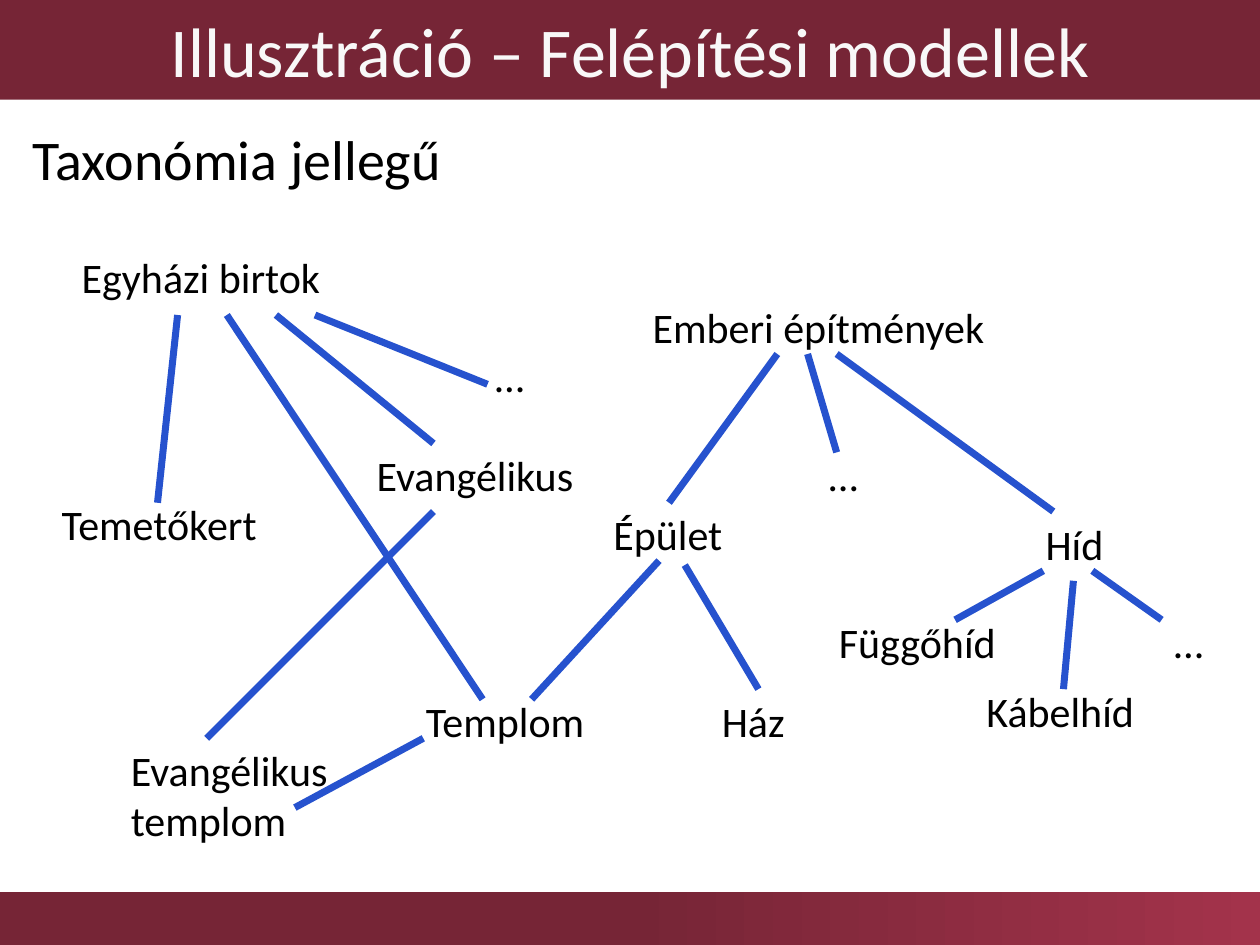
from pptx import Presentation
from pptx.dml.color import RGBColor as RGB
from pptx.enum.shapes import MSO_CONNECTOR as CONN, MSO_SHAPE as SHAPE
from pptx.enum.text import MSO_ANCHOR as ANCHOR, MSO_AUTO_SIZE as AUTO, PP_ALIGN as ALIGN
from pptx.oxml.ns import qn
from pptx.util import Pt
from lxml.etree import SubElement

INK = {"bar": "762536", "glow": "A3334B", "title": "F8F8F8",
       "text": "000000", "line": "2652CE"}
FONT = "Calibri"
ROW = 36  # height of a one-line label

# key: (text, left, top, width, height)
NODES = {
    "estate": ("Egyházi birtok", 39.6, 140.4, 157.7, ROW),
    "built": ("Emberi építmények", 365.8, 168.5, 270, ROW),
    "house": ("Épület", 343.4, 286.9, 95.8, ROW),
    "bridge": ("Híd", 590.4, 292.5, 95.8, ROW),
    "home": ("Ház", 405.4, 393.8, 95.8, ROW),
    "church": ("Templom", 236.2, 393.8, 106.6, ROW),
    "yard": ("Temetőkert", 28.1, 281.3, 140.4, ROW),
    "hung": ("Függőhíd", 472.3, 348.5, 146.2, ROW),
    "cable": ("Kábelhíd", 556.6, 388.1, 146.2, ROW),
    "more bridges": ("…", 663.8, 348.5, 39.6, ROW),
    "more built": ("…", 466.6, 253.4, 33.8, ROW),
    "faith": ("Evangélikus", 208.1, 253.4, 140.4, ROW),
    "more estate": ("…", 275.8, 196.6, 33.8, ROW),
    "both": ("Evangélikus templom", 67.7, 421.9, 140.4, 65.5),
}

# child end x, y, then parent end x, y
LINKS = [
    # from the church estate
    (90, 287.3, 101.5, 180), (275.8, 399.6, 129.6, 180),
    (247.7, 253.4, 157.7, 180), (278.6, 219.6, 180, 180),
    # from human structures
    (382.3, 287.3, 444.2, 202.3), (478.1, 258.5, 461.5, 202.3),
    (601.9, 292.3, 478.1, 202.3),
    # from building
    (303.8, 399.6, 376.6, 320.4),
    # from bridge
    (545.8, 354.2, 596.2, 326.2), (607.7, 393.8, 613.4, 331.9),
    (663.8, 354.2, 624.2, 326.2),
    # to the Lutheran church
    (118.1, 421.9, 247.7, 292.3), (168.5, 461.5, 241.9, 421.9),
]


def tint(key):
    return RGB.from_string(INK[key])


def place(shape, x, y, w, h):
    shape.left, shape.top, shape.width, shape.height = map(Pt, (x, y, w, h))


def write(shape, text, size=24, color="text", align=ALIGN.LEFT,
          anchor=ANCHOR.TOP, fit=AUTO.NONE, hang=None):
    frame = shape.text_frame
    frame.word_wrap = True
    frame.auto_size = fit
    frame.vertical_anchor = anchor
    para = frame.paragraphs[0]
    para.text = text
    if hang is not None:  # hanging indent without a bullet
        props = para._p.get_or_add_pPr()
        props.set("marL", str(Pt(hang)))
        props.set("indent", str(-Pt(hang)))
        SubElement(props, qn("a:buNone"))
    para.alignment = align
    para.space_before = Pt(0)
    font = para.runs[0].font
    font.name, font.size = FONT, Pt(size)
    font.color.rgb = tint(color)


def strip(slide):
    bar = slide.shapes.add_shape(SHAPE.RECTANGLE, Pt(0), Pt(509.8), Pt(720), Pt(30.2))
    bar.shadow.inherit = False
    bar.line.fill.background()
    bar.fill.gradient()
    bar.fill.gradient_angle = 0
    stops = bar.fill.gradient_stops
    for stop, pos, key in zip(stops, (0.5, 1), ("bar", "glow")):
        stop.position = pos
        stop.color.rgb = tint(key)


def label(slide, text, *box):
    shape = slide.shapes.add_textbox(*map(Pt, box))
    write(shape, text, fit=AUTO.SHAPE_TO_FIT_TEXT)
    return shape


def link(slide, *ends):
    line = slide.shapes.add_connector(CONN.STRAIGHT, *map(Pt, ends))
    line.line.color.rgb = tint("line")
    line.line.width = Pt(4)
    SubElement(line._element.spPr, qn("a:effectLst"))
    return line


def main():
    deck = Presentation()
    deck.slide_width, deck.slide_height = Pt(720), Pt(540)
    slide = deck.slides.add_slide(deck.slide_layouts[1])

    # Bars, title and heading
    strip(slide)
    title, body = slide.placeholders
    place(title, 0, 0, 720, 56.9)
    title.fill.solid()
    title.fill.fore_color.rgb = tint("bar")
    write(title, "Illusztráció – Felépítési modellek", size=40, color="title",
          align=ALIGN.CENTER, anchor=ANCHOR.MIDDLE)
    place(body, 11.5, 67.7, 697.7, 435.6)
    write(body, "Taxonómia jellegű", size=32, hang=27)

    # Taxonomy
    nodes = {key: label(slide, *node) for key, node in NODES.items()}
    for ends in LINKS:
        link(slide, *ends)
    stem = link(slide, 433.4, 393.8, 391, 323)
    stem.end_connect(nodes["house"], 2)

    deck.save("out.pptx")


if __name__ == "__main__":
    main()
